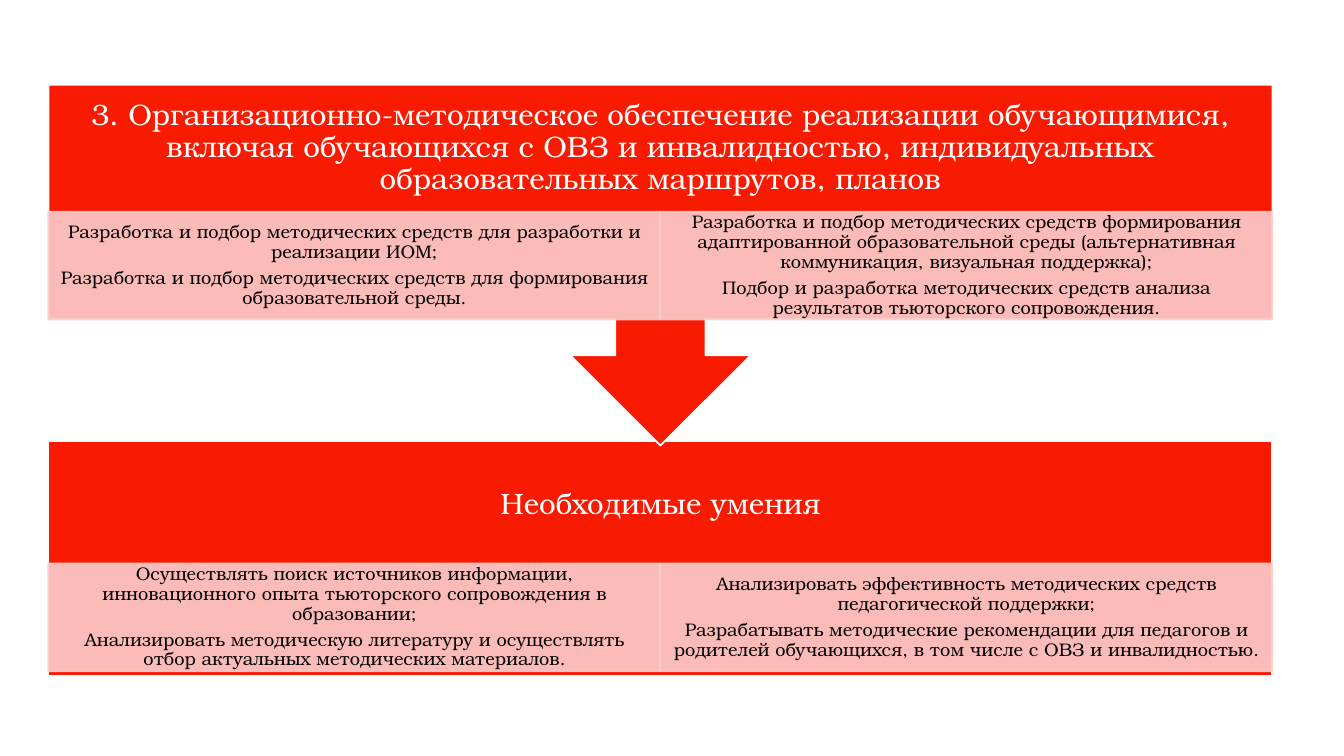
from dataclasses import dataclass

from lxml.etree import SubElement
from pptx import Presentation
from pptx.dml.color import RGBColor
from pptx.enum.shapes import MSO_SHAPE as Shape
from pptx.enum.text import MSO_ANCHOR as Anchor, PP_ALIGN as Align
from pptx.oxml.ns import qn
from pptx.util import Inches, Pt


@dataclass(frozen=True)
class Theme:
    font: str = "TeX Gyre Bonum"
    red: str = "F81B02"
    pink: str = "FCCDCC"
    white: str = "FFFFFF"
    black: str = "000000"
    heading_size: float = 21
    body_size: float = 13
    line_width: float = 1.25
    pink_opacity: int = 90


LEFT, WIDTH = 0.48, 12.14
HEADING_HEIGHT, CELL_HEIGHT = 1.26, 1.07


def write_text(shape, paragraphs, *, font, size, color, inset_x, inset_y):
    """Fill a shape with centred paragraphs."""
    frame = shape.text_frame
    frame.word_wrap = True
    frame.vertical_anchor = Anchor.MIDDLE
    frame.margin_left = frame.margin_right = Inches(inset_x)
    frame.margin_top = frame.margin_bottom = Inches(inset_y)
    for index, text in enumerate(paragraphs):
        paragraph = frame.add_paragraph() if index else frame.paragraphs[0]
        paragraph.alignment = Align.CENTER
        paragraph.line_spacing = 0.9
        paragraph.space_after = Pt(round(0.35 * size, 2))
        run = paragraph.add_run()
        run.text = text
        run.font.name = font
        run.font.size = Pt(size)
        run.font.color.rgb = RGBColor.from_string(color)


class SlideBuilder:
    def __init__(self, slide, theme):
        self.slide = slide
        self.theme = theme

    def add_block(self, kind, left, top, width, height, fill, line, opacity=100):
        shape = self.slide.shapes.add_shape(
            kind, Inches(left), Inches(top), Inches(width), Inches(height))
        shape.shadow.inherit = False
        shape.fill.solid()
        shape.fill.fore_color.rgb = RGBColor.from_string(fill)
        shape.line.color.rgb = RGBColor.from_string(line)
        shape.line.width = Pt(self.theme.line_width)
        if opacity < 100:
            for color in shape.fill._xPr.iter(qn("a:srgbClr")):
                SubElement(color, qn("a:alpha"), val=str(opacity * 1000))
        return shape

    def add_heading(self, top, text):
        theme = self.theme
        box = self.slide.shapes.add_textbox(
            Inches(LEFT), Inches(top), Inches(WIDTH), Inches(HEADING_HEIGHT))
        write_text(box, [text], font=theme.font, size=theme.heading_size,
                   color=theme.white, inset_x=0.16, inset_y=0.16)

    def add_cells(self, top, columns):
        theme = self.theme
        width = WIDTH / len(columns)
        for index, paragraphs in enumerate(columns):
            cell = self.add_block(
                Shape.RECTANGLE, LEFT + index * width, top, width, CELL_HEIGHT,
                theme.pink, theme.pink, theme.pink_opacity)
            write_text(cell, paragraphs, font=theme.font, size=theme.body_size,
                       color=theme.black, inset_x=0.1, inset_y=0.02)

    def add_section(self, kind, top, height, heading, cells_top, columns, rotation=0):
        block = self.add_block(kind, LEFT, top, WIDTH, height,
                               self.theme.red, self.theme.white)
        block.rotation = rotation
        self.add_heading(top, heading)
        self.add_cells(cells_top, columns)


def main():
    presentation = Presentation()
    presentation.slide_width = Inches(13.33)
    presentation.slide_height = Inches(7.5)
    slide = presentation.slides.add_slide(presentation.slide_layouts[6])
    builder = SlideBuilder(slide, Theme())

    # Required skills, below the arrow
    builder.add_section(
        Shape.RECTANGLE, 4.38, 2.33, "Необходимые умения", 5.59,
        [
            ["Осуществлять поиск источников информации, инновационного опыта "
             "тьюторского сопровождения в образовании;",
             "Анализировать методическую литературу и осуществлять отбор "
             "актуальных методических материалов."],
            ["Анализировать эффективность методических средств "
             "педагогической поддержки;",
             "Разрабатывать методические рекомендации для педагогов и родителей "
             "обучающихся, в том числе с ОВЗ и инвалидностью."],
        ])

    # Job function, with the arrow pointing down to the skills
    builder.add_section(
        Shape.UP_ARROW_CALLOUT, 0.84, 3.58,
        "3. Организационно-методическое обеспечение реализации обучающимися, "
        "включая обучающихся с ОВЗ и инвалидностью, индивидуальных "
        "образовательных маршрутов, планов", 2.1,
        [
            ["Разработка и подбор методических средств для разработки "
             "и реализации ИОМ;",
             "Разработка и подбор методических средств для формирования "
             "образовательной среды."],
            ["Разработка и подбор методических средств формирования "
             "адаптированной образовательной среды (альтернативная "
             "коммуникация, визуальная поддержка);",
             "Подбор и разработка методических средств анализа результатов "
             "тьюторского сопровождения."],
        ],
        rotation=180)

    presentation.save("out.pptx")


if __name__ == "__main__":
    main()
